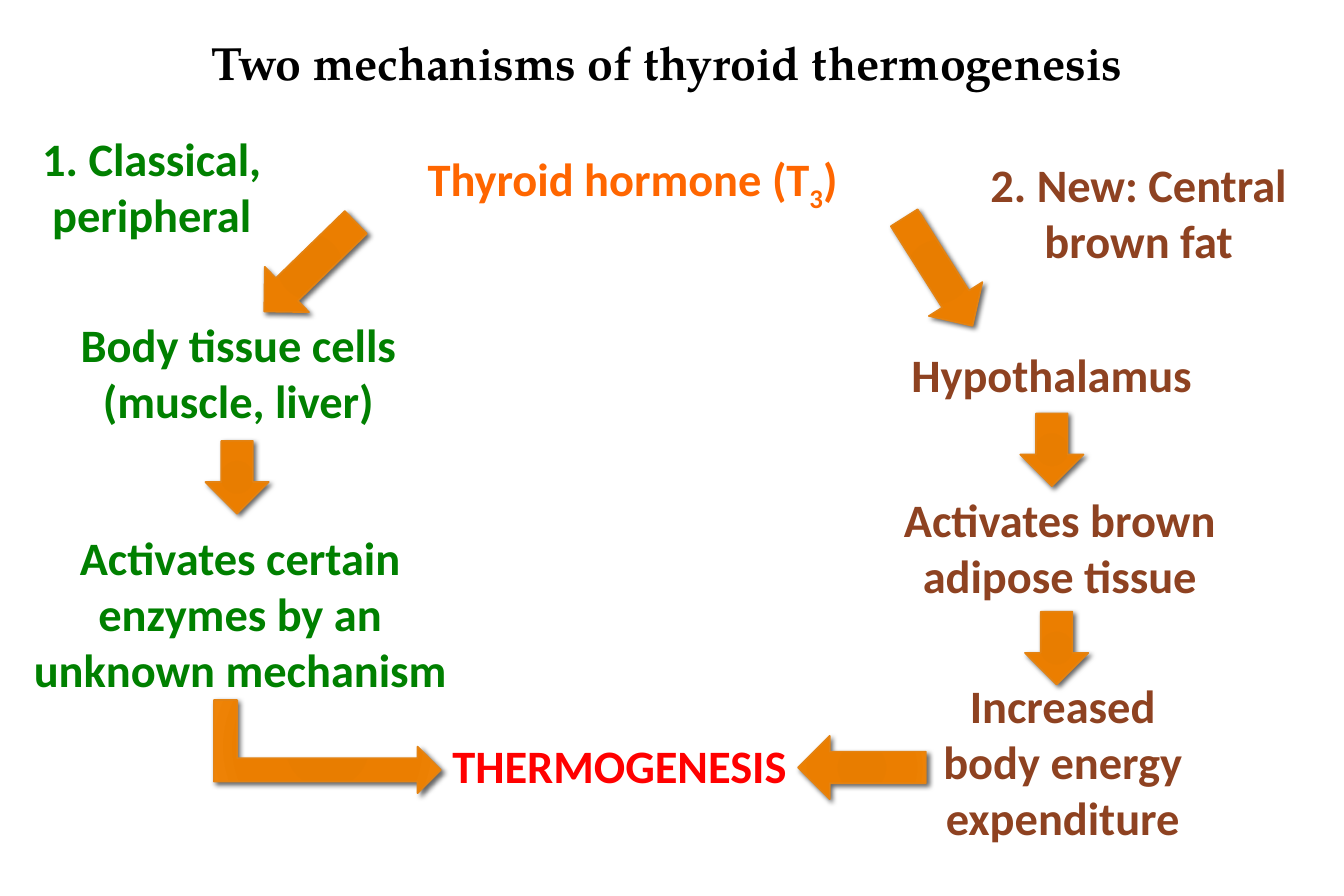
from collections import namedtuple
from dataclasses import dataclass

from lxml import etree
from pptx import Presentation
from pptx.dml.color import RGBColor
from pptx.enum.shapes import MSO_SHAPE as Preset
from pptx.enum.text import MSO_AUTO_SIZE as AutoSize, PP_ALIGN as Align
from pptx.oxml import parse_xml
from pptx.oxml.ns import nsdecls, qn
from pptx.util import Inches, Pt

Box = namedtuple("Box", "left top width height")


@dataclass(frozen=True)
class Theme:
    """Colours, fonts and sizes of the slide."""
    title: str = "000000"
    hormone: str = "FF6600"
    classical: str = "008000"
    central: str = "8E4221"
    outcome: str = "FF0000"
    arrow_line: str = "E48312"
    arrow_stops: tuple = ((0, "E57B00"), (34, "E87D00"), (70, "EB7E00"), (100, "EF8407"))
    shadow: str = "000000"
    title_font: str = "TeX Gyre Pagella"
    body_font: str = "Calibri"
    text_size: int = 28
    line_height: float = 0.47
    text_margin: float = 0.1
    arrow_width: float = 0.53
    short_arrow: float = 0.61
    long_arrow: float = 1.07


THEME = Theme()


def inside(box, left, top, width, height):
    """Return a box offset from the corner of the given box."""
    return Box(box.left + left, box.top + top, width, height)


def add_run(paragraph, text, color, font_name, baseline=0):
    """Add a bold run, lowered when a baseline is given."""
    run = paragraph.add_run()
    run.text = text
    formats = {"name": font_name, "size": Pt(THEME.text_size), "bold": True}
    for name, value in formats.items():
        setattr(run.font, name, value)
    run.font.color.rgb = RGBColor.from_string(color)
    if baseline:
        run.font._element.set("baseline", str(baseline * 1000))


def add_label(slide, box, left, top, width, lines, color,
              font_name=THEME.body_font, wrap=False, align=Align.CENTER):
    """Place a label whose lines are lists of (text, baseline) or plain strings."""
    height = len(lines) * THEME.line_height + THEME.text_margin
    place = inside(box, left, top, width, height)
    frame = slide.shapes.add_textbox(*map(Inches, place)).text_frame
    frame.word_wrap = wrap
    frame.auto_size = AutoSize.SHAPE_TO_FIT_TEXT
    for index, line in enumerate(lines):
        paragraph = frame.add_paragraph() if index else frame.paragraphs[0]
        paragraph.alignment = align
        parts = [(line, 0)] if isinstance(line, str) else line
        for text, baseline in parts:
            add_run(paragraph, text, color, font_name, baseline)


def add_arrow(slide, box, left, top, height, rotation=0,
              preset=Preset.DOWN_ARROW, width=THEME.arrow_width):
    """Place a block arrow with a radial gradient and a soft shadow."""
    place = inside(box, left, top, width, height)
    shape = slide.shapes.add_shape(preset, *map(Inches, place))
    shape.rotation = rotation
    shape.line.color.rgb = RGBColor.from_string(THEME.arrow_line)
    shape.line.width = Pt(1)
    shape.shadow.inherit = False
    shape.fill.background()
    properties = shape._element.spPr
    stops = "".join(f'<a:gs pos="{position * 1000}"><a:srgbClr val="{color}"/></a:gs>'
                    for position, color in THEME.arrow_stops)
    gradient = parse_xml(
        f'<a:gradFill {nsdecls("a")} rotWithShape="1"><a:gsLst>{stops}</a:gsLst>'
        '<a:path path="circle"><a:fillToRect l="100000" t="100000" r="100000" b="100000"/>'
        '</a:path></a:gradFill>')
    properties.replace(properties.find(qn("a:noFill")), gradient)
    effects = properties.find(qn("a:effectLst"))
    shadow = etree.SubElement(effects, qn("a:outerShdw"), blurRad=str(Pt(3)),
                              dist=str(Pt(2)), dir="2700000", rotWithShape="0")
    color = etree.SubElement(shadow, qn("a:srgbClr"), val=THEME.shadow)
    etree.SubElement(color, qn("a:alpha"), val="60000")


def add_heading(slide, box):
    """Place the title and the hormone that starts both pathways."""
    add_label(slide, box, 0, 0, box.width, ["Two mechanisms of thyroid thermogenesis"],
              THEME.title, THEME.title_font, wrap=True)
    hormone = [("Thyroid hormone (T", 0), ("3", -25), (")", 0)]
    add_label(slide, box, 1.68, 0.97, 5.03, [hormone], THEME.hormone, wrap=True)


def add_classical_pathway(slide, box):
    """Place the peripheral pathway and its arrows."""
    labels = [
        (0.08, 0, 2.06, ["1. Classical,", "peripheral"]),
        (0.4, 1.56, 2.87, ["Body tissue cells", "(muscle, liver)"]),
        (0, 3.34, 3.7, ["Activates certain", "enzymes by an", "unknown mechanism"]),
    ]
    for label in labels:
        add_label(slide, box, *label, THEME.classical)
    add_arrow(slide, box, 2.17, 0.66, THEME.long_arrow, 45.8)
    add_arrow(slide, box, 1.56, 2.65, THEME.short_arrow)
    add_arrow(slide, box, 2.19, 4.26, 1.9, 90, Preset.BENT_UP_ARROW, 0.78)


def add_central_pathway(slide, box):
    """Place the brown fat pathway and its arrows."""
    labels = [
        (0.73, 0, 2.72, ["2. New: Central", "brown fat"]),
        (0, 2.8, 2.86, ["Activates brown", "adipose tissue"]),
        (0.34, 4.36, 2.23, ["Increased", "body energy", "expenditure"]),
    ]
    for label in labels:
        add_label(slide, box, *label, THEME.central)
    add_label(slide, box, 0.09, 1.59, 2.58, ["Hypothalamus"], THEME.central, align=Align.LEFT)
    add_arrow(slide, box, 0.15, 0.48, THEME.long_arrow, 327.7)
    for left, top in [(1.1, 2.2), (1.14, 3.86)]:
        add_arrow(slide, box, left, top, THEME.short_arrow)


def add_outcome(slide, box):
    """Place the shared outcome and the arrow from the central pathway."""
    add_label(slide, box, 0, 0.23, 3.03, ["THERMOGENESIS"], THEME.outcome)
    add_arrow(slide, box, 3.28, 0, THEME.long_arrow, 90)


def main():
    """Build and save the slide."""
    presentation = Presentation()
    presentation.slide_width = Inches(11.25)
    presentation.slide_height = Inches(7.5)
    slide = presentation.slides.add_slide(presentation.slide_layouts[6])
    add_heading(slide, Box(1.1, 0.24, 8.97, 1.54))
    add_classical_pathway(slide, Box(0.16, 1.04, 3.7, 5.6))
    add_central_pathway(slide, Box(7.44, 1.26, 3.45, 5.87))
    add_outcome(slide, Box(3.67, 5.89, 4.08, 1.07))
    presentation.save("out.pptx")


if __name__ == "__main__":
    main()
